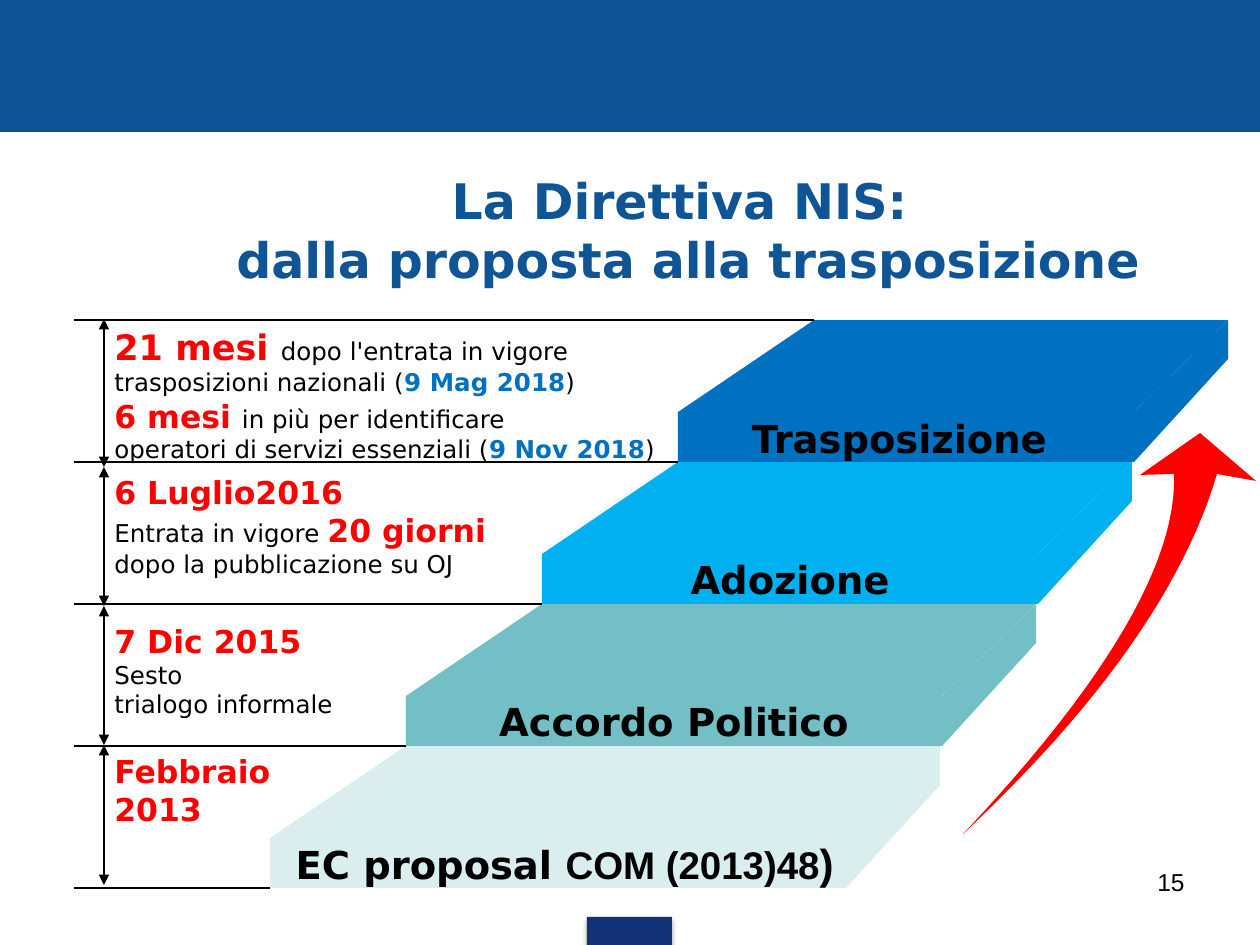
from lxml import etree
from pptx import Presentation
from pptx.dml.color import RGBColor
from pptx.enum.shapes import MSO_CONNECTOR, MSO_SHAPE
from pptx.enum.text import MSO_ANCHOR, PP_ALIGN
from pptx.oxml import parse_xml
from pptx.oxml.ns import nsdecls, qn
from pptx.util import Pt

LEFT, CENTER, RIGHT = PP_ALIGN.LEFT, PP_ALIGN.CENTER, PP_ALIGN.RIGHT
TOP, MIDDLE = MSO_ANCHOR.TOP, MSO_ANCHOR.MIDDLE
RECTANGLE, STRAIGHT = MSO_SHAPE.RECTANGLE, MSO_CONNECTOR.STRAIGHT

SANS, ARIAL = "DejaVu Sans", "Arial"
BLUE, RED, BLACK, DATE_BLUE = "0F5494", "FF0000", "000000", "0070C0"


# Run styles: text, size, colour, bold, font
def plain(text):
    return text, 14, BLACK, False, SANS


def red(text, size=18):
    return text, size, RED, True, SANS


def date(text):
    return text, 14, DATE_BLUE, True, SANS


def label(text, font=SANS, size=22):
    return text, size, BLACK, True, font


# Content: steps from the bottom up (colour, label runs)
TITLE = [[("La Direttiva NIS: \ndalla proposta alla trasposizione", 28, BLUE, True, SANS)]]
STEPS = [
    ("DAEDEF", [label(" EC proposal "), label("COM (2013)48", ARIAL), label(")", ARIAL, 24)]),
    ("72BFC5", [label("Accordo Politico")]),
    ("00B0F0", [label("Adozione")]),
    ("0070C0", [label("Trasposizione"), (" ", 24, BLACK, False, SANS)]),
]
# Notes: top, width, height, paragraphs
NOTES = [
    (319, 597, 183, [
        [red("21 mesi ", 20), plain("dopo l'entrata in vigore")],
        [plain("trasposizioni nazionali ("), date("9 Mag 2018"), plain(")")],
        [red("6 mesi "), plain("in più per identificare")],
        [plain("operatori di servizi essenziali ("), date("9 Nov 2018"), plain(")")],
    ]),
    (467, 420, 178, [
        [red("6 Luglio2016")],
        [plain("Entrata in vigore "), red("20 giorni")],
        [plain("dopo la pubblicazione su OJ")],
    ]),
    (616, 270, 140, [[red("7 Dic 2015")], [plain("Sesto \ntrialogo informale")]]),
    (746, 200, 90, [[red("Febbraio")], [red("2013")]]),
]
SPAN_ENDS = [319, 467, 606, 745, 885]

# Staircase geometry
STEP_LEFT, STEP_RIGHT, STEP_BOTTOM = 270, 846, 888
SHIFT_LEFT, SHIFT_RIGHT, RISE = 136, 96, 142
FRONT_HEIGHT, SIDE_DROP, SIDE_WIDTH = 50, 103, 94
RULE_LEFT, SPAN_X, NOTE_LEFT = 74, 104, 102

# Growing arrow: tip, bends and head
ARROW_TIP = (963, 834)
OUTER_BEND, OUTER_END = (1167, 643), (1217, 474)
INNER_BEND, INNER_END = (1179, 605), (1174, 474)
ARROW_HEAD = [(1256, 481), (1200, 433), (1140, 475)]

PX = 914400 / 126


def emu(px):
    return round(px * PX)


def color(hex_text):
    return RGBColor.from_string(hex_text)


def write(frame, paragraphs, align=LEFT, anchor=TOP, wrap=True):
    frame.word_wrap = wrap
    frame.vertical_anchor = anchor
    for i, runs in enumerate(paragraphs):
        paragraph = frame.paragraphs[0] if i == 0 else frame.add_paragraph()
        paragraph.alignment = align
        for text, size, hex_text, bold, font in runs:
            for j, line in enumerate(text.split("\n")):
                if j:
                    paragraph.add_line_break()
                run = paragraph.add_run()
                run.text = line
                run.font.size = Pt(size)
                run.font.name = font
                run.font.bold = bold
                run.font.color.rgb = color(hex_text)


def paint(shape, hex_text):
    shape.shadow.inherit = False
    shape.fill.solid()
    shape.fill.fore_color.rgb = color(hex_text)
    shape.line.fill.background()
    return shape


def add_block(x, y, w, h, hex_text):
    block = slide.shapes.add_shape(RECTANGLE, emu(x), emu(y), emu(w), emu(h))
    return paint(block, hex_text)


def add_outline(points, hex_text):
    corners = [(emu(x), emu(y)) for x, y in points]
    builder = slide.shapes.build_freeform(*corners[0], scale=1.0)
    builder.add_line_segments(corners[1:], close=True)
    return paint(builder.convert_to_shape(), hex_text)


def add_text(x, y, w, h, paragraphs, **layout):
    box = slide.shapes.add_textbox(emu(x), emu(y), emu(w), emu(h))
    write(box.text_frame, paragraphs, **layout)


def add_line(x1, y1, x2, y2, arrows=False):
    line = slide.shapes.add_connector(STRAIGHT, emu(x1), emu(y1), emu(x2), emu(y2))
    line.line.color.rgb = color(BLACK)
    line.line.width = Pt(0.75)
    if arrows:
        for end in ("a:headEnd", "a:tailEnd"):
            etree.SubElement(line.line._get_or_add_ln(), qn(end), type="triangle")
    etree.SubElement(line._element.spPr, qn("a:effectLst"))


def curve(start, bend, end, count=24):
    """Points along a quadratic curve."""
    steps = [i / count for i in range(count + 1)]
    return [tuple((1 - t) ** 2 * a + 2 * t * (1 - t) * b + t * t * c
                  for a, b, c in zip(start, bend, end)) for t in steps]


prs = Presentation()
prs.slide_width, prs.slide_height = emu(1260), emu(945)
slide = prs.slides.add_slide(prs.slide_layouts[6])

# Header band and footer block with a soft shadow
add_block(0, 0, 1260, 132, BLUE)
footer = add_block(587, 917, 85, 28, "133176")
footer._element.spPr.find(qn("a:effectLst")).append(parse_xml(
    f'<a:outerShdw {nsdecls("a")} blurRad="39370" dist="22860" dir="5400000" rotWithShape="0">'
    '<a:srgbClr val="000000"><a:alpha val="35000"/></a:srgbClr></a:outerShdw>'))

# Title and page number
add_text(121, 165, 1134, 129, TITLE, align=CENTER, anchor=MIDDLE)
add_text(903, 861, 294, 65, [[("15", 14, BLACK, False, ARIAL)]], align=RIGHT)

# Staircase: side, top and front of each step, with its rule
for i, (fill, runs) in enumerate(STEPS):
    left, right = STEP_LEFT + i * SHIFT_LEFT, STEP_RIGHT + i * SHIFT_RIGHT
    bottom = STEP_BOTTOM - i * RISE
    back, front, far = bottom - RISE, bottom - FRONT_HEIGHT, right + SIDE_WIDTH
    add_outline([(far, back), (far, bottom - SIDE_DROP), (right, bottom), (right, front)], fill)
    add_outline([(left, front), (left + SHIFT_LEFT, back), (far, back), (right, front)], fill)
    face = add_block(left, front, right - left, FRONT_HEIGHT, fill)
    write(face.text_frame, [runs], align=CENTER, anchor=MIDDLE, wrap=False)
    add_line(left, bottom, RULE_LEFT, bottom)
add_line(left + SHIFT_LEFT, back, RULE_LEFT, back)

# Time spans
for start, end in zip(SPAN_ENDS, SPAN_ENDS[1:]):
    add_line(SPAN_X, start, SPAN_X, end, arrows=True)

# Growing arrow
outer_edge = curve(ARROW_TIP, OUTER_BEND, OUTER_END)
inner_edge = curve(INNER_END, INNER_BEND, ARROW_TIP)
add_outline(outer_edge + ARROW_HEAD + inner_edge[:-1], RED)

# Notes beside the steps
for top, width, height, paragraphs in NOTES:
    add_text(NOTE_LEFT, top, width, height, paragraphs)

prs.save("out.pptx")
